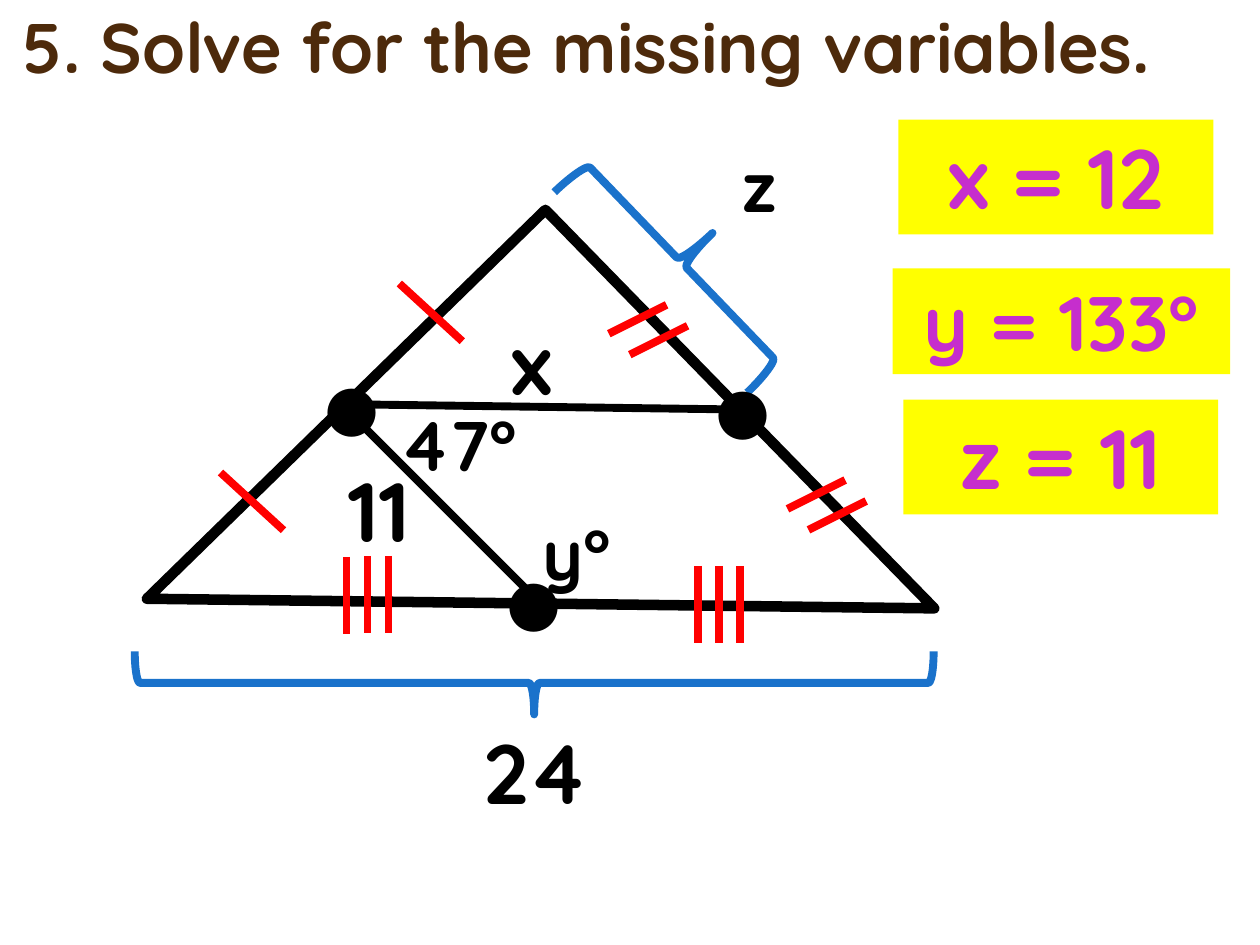
from pptx import Presentation
from pptx.dml.color import RGBColor
from pptx.enum.shapes import MSO_CONNECTOR, MSO_SHAPE
from pptx.enum.text import MSO_ANCHOR, MSO_AUTO_SIZE, PP_ALIGN
from pptx.oxml.ns import qn
from pptx.util import Pt
from lxml.etree import SubElement

FONT = "Quicksand"
COLORS = {
    "title": "4D2A0B",
    "ink": "000000",
    "tick": "FF0000",
    "brace": "1A72CB",
    "answer": "C62ECD",
    "highlight": "FFFF00",
}


def rgb(name):
    return RGBColor.from_string(COLORS[name])


def set_text(sp, text, size, color, bold=True, align=PP_ALIGN.LEFT):
    tf = sp.text_frame
    tf.word_wrap = True
    tf.vertical_anchor = MSO_ANCHOR.TOP
    p = tf.paragraphs[0]
    p.text = text
    p.alignment = align
    p.font.name = FONT
    p.font.size = Pt(size)
    p.font.bold = bold
    p.font.color.rgb = rgb(color)
    return tf


def add_label(slide, x, y, w, h, text, size, color="ink", bold=True):
    sp = slide.shapes.add_textbox(Pt(x), Pt(y), Pt(w), Pt(h))
    return set_text(sp, text, size, color, bold)


def add_line(slide, x, y, dx, dy, color):
    line = slide.shapes.add_connector(
        MSO_CONNECTOR.STRAIGHT, Pt(x), Pt(y), Pt(x + dx), Pt(y + dy))
    line.line.color.rgb = rgb(color)
    line.line.width = Pt(4.5)
    SubElement(line._element.spPr, qn("a:effectLst"))


def add_outline(slide, kind, x, y, w, h, rotation, color, width):
    sp = slide.shapes.add_shape(kind, Pt(x), Pt(y), Pt(w), Pt(h))
    sp.rotation = rotation
    sp.shadow.inherit = False
    sp.fill.background()
    sp.line.color.rgb = rgb(color)
    sp.line.width = Pt(width)


def add_title(slide, x, y, w, h):
    tf = add_label(slide, x, y, w, h,
                   "5. Solve for the missing variables.", 40, "title")
    tf.vertical_anchor = MSO_ANCHOR.BOTTOM
    tf.paragraphs[0].line_spacing = 0.9


def add_triangle_figure(slide, x, y):
    # Large triangle
    add_outline(slide, MSO_SHAPE.RIGHT_TRIANGLE, x + 77.8, y + 113.8,
                318.2, 318.2, 135.7, "ink", 6)

    # Congruence ticks: first tick, its extent, gap to the next, count
    ticks = [
        (156.2, 90, 36, 33, 0, 0, 1),
        (54, 198, 36, 33, 0, 0, 1),
        (308.9, 102.2, -33, 16.5, 12, 12, 2),
        (411, 202.3, -33, 16.5, 12, 12, 2),
        (126, 246.2, 0, 44, 12, -0.3, 3),
        (326.9, 251.3, 0, 44, 12, 0, 3),
    ]
    for tx, ty, dx, dy, gap_x, gap_y, count in ticks:
        for i in range(count):
            add_line(slide, x + tx + i * gap_x, y + ty + i * gap_y,
                     dx, dy, "tick")

    # Midsegments
    add_line(slide, x + 126, y + 159, 224.6, 3, "ink")
    add_line(slide, x + 126, y + 162, 111, 111, "ink")

    # Braces along the base and the right side
    for bx, by, w, h, rotation in [(215.3, 90, 36, 456.5, 270),
                                   (293, -1.4, 49, 159, 136.1)]:
        add_outline(slide, MSO_SHAPE.LEFT_BRACE, x + bx, y + by, w, h,
                    rotation, "brace", 4.5)

    # Measures
    for text, lx, ly, size in [("24", 197.3, 336.2, 48), ("x", 213, 102.2, 48),
                               ("11", 120.2, 186.5, 48), ("47°", 149.8, 154, 40),
                               ("y°", 231, 216, 40), ("z", 345, 5.8, 40)]:
        add_label(slide, x + lx, y + ly, 93, size * 1.25 + 5.4, text, size)

    # Midpoints
    for mx, my in [(106.6, 134), (210.2, 245.5), (329.8, 135.4)]:
        add_label(slide, x + mx, y + my, 41.8, 51, "●", 36, bold=False)


def add_answers(slide, x, y):
    for text, ax, ay, w, h, size in [("x = 12", 3.4, 0, 180, 65.5, 48),
                                     ("y = 133°", 0, 85, 193, 60.5, 44),
                                     ("z = 11", 6.2, 160, 180, 65.5, 48)]:
        sp = slide.shapes.add_shape(MSO_SHAPE.RECTANGLE, Pt(x + ax), Pt(y + ay),
                                    Pt(w), Pt(h))
        sp.shadow.inherit = False
        sp.fill.solid()
        sp.fill.fore_color.rgb = rgb("highlight")
        sp.line.fill.background()
        tf = set_text(sp, text, size, "answer", align=PP_ALIGN.CENTER)
        tf.auto_size = MSO_AUTO_SIZE.SHAPE_TO_FIT_TEXT


def main():
    prs = Presentation()
    prs.slide_width, prs.slide_height = Pt(720), Pt(540)
    slide = prs.slides.add_slide(prs.slide_layouts[6])
    add_title(slide, 6, 0, 685, 54)
    add_triangle_figure(slide, 72, 72)
    add_answers(slide, 510, 68.4)
    prs.save("out.pptx")


if __name__ == "__main__":
    main()
